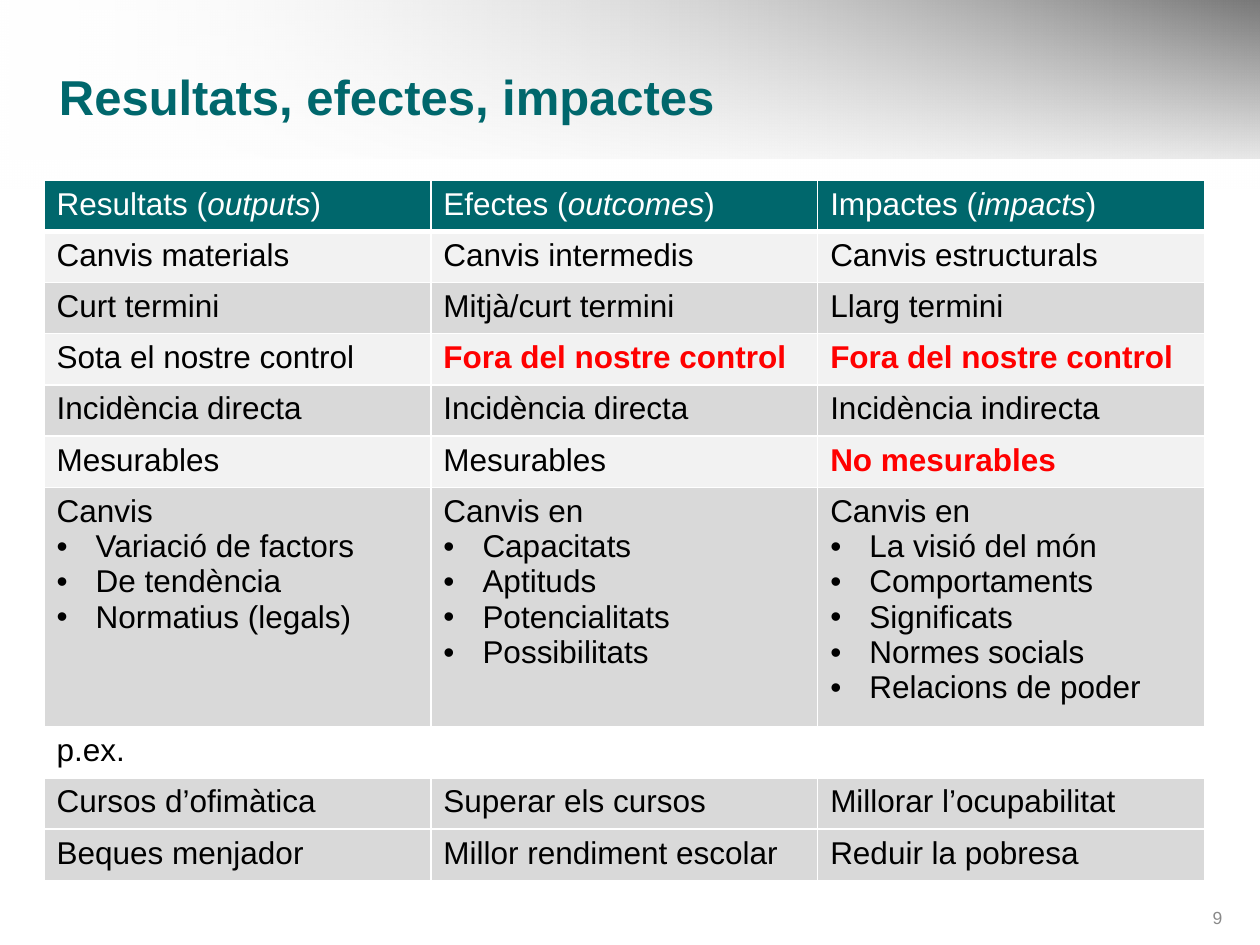
import pptx
import pptx.dml.color
import pptx.enum.shapes
import pptx.enum.text
import pptx.oxml.ns
import pptx.util
from lxml import etree
from pptx.util import Inches

FONT = "Arial"
TEAL, RED, BLACK, WHITE = "00676C", "FF0000", "000000", "FFFFFF"
LIGHT, GREY, NUMBER_GREY = "F2F2F2", "D9D9D9", "898989"

HEADERS = [("Resultats", "outputs"), ("Efectes", "outcomes"), ("Impactes", "impacts")]
# Each cell holds its first line, then any bulleted lines.
ROWS = [
    (LIGHT, [["Canvis materials"], ["Canvis intermedis"], ["Canvis estructurals"]]),
    (GREY, [["Curt termini"], ["Mitjà/curt termini"], ["Llarg termini"]]),
    (LIGHT, [["Sota el nostre control"], ["Fora del nostre control"],
             ["Fora del nostre control"]]),
    (GREY, [["Incidència directa"], ["Incidència directa"], ["Incidència indirecta"]]),
    (LIGHT, [["Mesurables"], ["Mesurables"], ["No mesurables"]]),
    (GREY, [["Canvis", "Variació de factors", "De tendència", "Normatius (legals)"],
            ["Canvis en", "Capacitats", "Aptituds", "Potencialitats", "Possibilitats"],
            ["Canvis en", "La visió del món", "Comportaments", "Significats",
             "Normes socials", "Relacions de poder"]]),
    (None, [["p.ex."], [], []]),
    (GREY, [["Cursos d’ofimàtica"], ["Superar els cursos"], ["Millorar l’ocupabilitat"]]),
    (GREY, [["Beques menjador"], ["Millor rendiment escolar"], ["Reduir la pobresa"]]),
]
HIGHLIGHTS = {"Fora del nostre control", "No mesurables"}
LIST_ROW = 6


def rgb(value):
    return pptx.dml.color.RGBColor.from_string(value)


def add_child(parent, tag, **attributes):
    child = etree.SubElement(parent, pptx.oxml.ns.qn(tag))
    for name, value in attributes.items():
        child.set(name, str(value))
    return child


def add_run(p, text, size, color, bold=False, italic=False):
    r = p.add_run()
    r.text = text
    r.font.name = FONT
    r.font.size = pptx.util.Pt(size)
    r.font.color.rgb = rgb(color)
    r.font.bold = bold
    r.font.italic = italic


def add_bullet(p):
    pPr = p._p.get_or_add_pPr()
    pPr.set("marL", str(Inches(0.31)))
    pPr.set("indent", str(-Inches(0.31)))
    add_child(pPr, "a:buFont", typeface=FONT)
    add_child(pPr, "a:buChar", char="•")


def add_gradient_band(slide, box, angle, stops):
    """Draw a rectangle with two (colour, opacity percent) gradient stops."""
    sp = slide.shapes.add_shape(pptx.enum.shapes.MSO_SHAPE.RECTANGLE, *box)
    sp.shadow.inherit = False
    sp.line.fill.background()
    sp.fill.gradient()
    sp.fill.gradient_angle = angle
    for stop, (color, opacity) in zip(sp.fill.gradient_stops, stops):
        stop.color.rgb = rgb(color)
        if opacity < 100:
            color_element = stop._gs[0]
            add_child(color_element, "a:alpha", val=opacity * 1000)


def add_header_band(slide, left, top, width, height):
    add_gradient_band(slide, (left, top, width, height), 0, [(WHITE, 0), (BLACK, 100)])
    add_gradient_band(slide, (left, top, width, height + Inches(0.24)), 270,
                      [(WHITE, 47), (WHITE, 100)])


def add_text(slide, box, text, size, color, bold=False, align=None):
    tf = slide.shapes.add_textbox(*box).text_frame
    tf.word_wrap = True
    tf.vertical_anchor = pptx.enum.text.MSO_ANCHOR.MIDDLE
    p = tf.paragraphs[0]
    p.alignment = align
    add_run(p, text, size, color, bold)


def style_cell(cell, fill, bottom=1):
    """Set white borders and the fill; the bottom width is in points."""
    tcPr = cell._tc.get_or_add_tcPr()
    for side, width in (("L", 1), ("R", 1), ("T", 1), ("B", bottom)):
        ln = add_child(tcPr, f"a:ln{side}", w=pptx.util.Pt(width))
        add_child(add_child(ln, "a:solidFill"), "a:srgbClr", val=WHITE)
    if fill:
        cell.fill.solid()
        cell.fill.fore_color.rgb = rgb(fill)
    else:
        cell.fill.background()


def write_lines(cell, lines):
    tf = cell.text_frame
    for i, line in enumerate(lines):
        p = tf.add_paragraph() if i else tf.paragraphs[0]
        if i:
            add_bullet(p)
        marked = line in HIGHLIGHTS
        add_run(p, line, 18, RED if marked else BLACK, bold=marked)


def add_comparison_table(slide, left, top, width, height):
    n_rows, n_cols = len(ROWS) + 1, len(HEADERS)
    table = slide.shapes.add_table(n_rows, n_cols, left, top, width, height).table
    table.first_row = table.horz_banding = False
    list_height = Inches(1.78)
    for i, row in enumerate(table.rows):
        row.height = list_height if i == LIST_ROW else (height - list_height) // (n_rows - 1)
    for column in table.columns:
        column.width = width // n_cols

    for c, (name, term) in enumerate(HEADERS):
        cell = table.cell(0, c)
        style_cell(cell, TEAL, bottom=3)
        p = cell.text_frame.paragraphs[0]
        add_run(p, f"{name} (", 18, WHITE)
        add_run(p, term, 18, WHITE, italic=True)
        add_run(p, ")", 18, WHITE)
    for r, (fill, cells) in enumerate(ROWS, 1):
        for c, lines in enumerate(cells):
            style_cell(table.cell(r, c), fill)
            write_lines(table.cell(r, c), lines)


def main():
    prs = pptx.Presentation()
    prs.slide_width, prs.slide_height = Inches(10), Inches(7.5)
    slide = prs.slides.add_slide(prs.slide_layouts[6])
    add_header_band(slide, 0, 0, prs.slide_width, Inches(1.26))
    add_text(slide, (Inches(9.17), Inches(7.14), Inches(0.63), Inches(0.29)), "9", 10,
             NUMBER_GREY, align=pptx.enum.text.PP_ALIGN.RIGHT)
    add_text(slide, (Inches(0.37), Inches(0.45), Inches(9.2), Inches(0.63)),
             "Resultats, efectes, impactes", 28, TEAL, bold=True)
    add_comparison_table(slide, Inches(0.35), Inches(1.43), Inches(9.21), Inches(5.44))
    prs.save("out.pptx")


if __name__ == "__main__":
    main()
